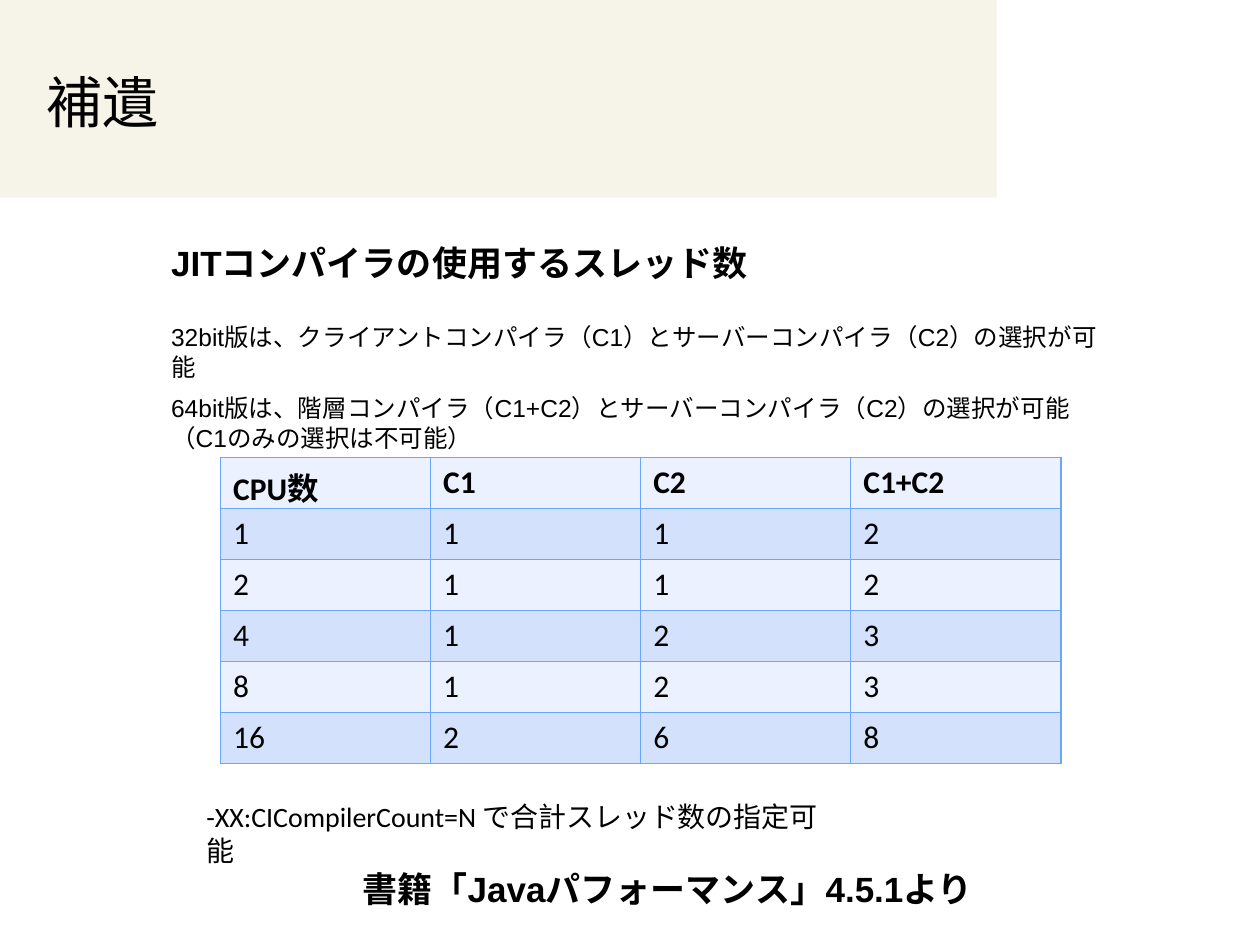
from lxml import etree
from pptx import Presentation
from pptx.dml.color import RGBColor
from pptx.enum.shapes import MSO_SHAPE
from pptx.enum.text import MSO_ANCHOR, PP_ALIGN
from pptx.oxml.ns import qn
from pptx.util import Inches, Pt

RECTANGLE = MSO_SHAPE.RECTANGLE
MIDDLE = MSO_ANCHOR.MIDDLE
CENTER = PP_ALIGN.CENTER

COLORS = {
    "text": "000000",
    "band": "F6F4E8",
    "border": "6BA7F8",
    "light_row": "EBF1FE",
    "dark_row": "D4E1FC",
}

THREAD_COUNTS = [
    ["CPU数", "C1", "C2", "C1+C2"],
    ["1", "1", "1", "2"],
    ["2", "1", "1", "2"],
    ["4", "1", "2", "3"],
    ["8", "1", "2", "3"],
    ["16", "2", "6", "8"],
]


def color(name):
    return RGBColor.from_string(COLORS[name])


class SlideBuilder:
    """Holds the style and the current slide."""

    def __init__(self, slide, font="Arial"):
        self.slide = slide
        self.font = font

    def style(self, paragraph, font_format, paragraph_format=None):
        for key, value in (paragraph_format or {}).items():
            setattr(paragraph, key, value)
        for key, value in {"name": self.font, **font_format}.items():
            setattr(paragraph.font, key, value)
        paragraph.font.color.rgb = color("text")

    def band(self, left, top, width, height):
        band = self.slide.shapes.add_shape(
            RECTANGLE, Inches(left), Inches(top), Inches(width), Inches(height))
        band.shadow.inherit = False
        band.fill.solid()
        band.fill.fore_color.rgb = color("band")
        band.line.fill.background()

    def text(self, box, lines, font_format, paragraph_format=None,
             gap=None, anchor=None):
        frame = self.slide.shapes.add_textbox(*map(Inches, box)).text_frame
        frame.word_wrap = True
        frame.vertical_anchor = anchor
        for index, line in enumerate(lines):
            paragraph = frame.add_paragraph() if index else frame.paragraphs[0]
            paragraph.text = line
            self.style(paragraph, font_format, paragraph_format)
            if index:
                paragraph.space_before = gap

    def borders(self, cell):
        properties = cell._tc.get_or_add_tcPr()
        for side in ("a:lnL", "a:lnR", "a:lnT", "a:lnB"):
            line = etree.SubElement(properties, qn(side), w=str(Pt(1)))
            fill = etree.SubElement(line, qn("a:solidFill"))
            etree.SubElement(fill, qn("a:srgbClr"), val=COLORS["border"])

    def table(self, box, rows, font_format):
        table = self.slide.shapes.add_table(
            len(rows), len(rows[0]), *map(Inches, box)).table
        for r, values in enumerate(rows):
            for c, value in enumerate(values):
                cell = table.cell(r, c)
                cell.text = value
                self.borders(cell)
                cell.fill.solid()
                cell.fill.fore_color.rgb = color("dark_row" if r % 2 else "light_row")
                self.style(cell.text_frame.paragraphs[0],
                           {**font_format, "bold": r == 0})


def main():
    presentation = Presentation()
    presentation.slide_width = Inches(10)
    presentation.slide_height = Inches(7.5)
    builder = SlideBuilder(
        presentation.slides.add_slide(presentation.slide_layouts[6]))

    # Title on its band
    builder.band(0, 0, 7.91, 1.57)
    builder.text((0.27, 0.3, 7.48, 1.01), ["補遺"], {"size": Pt(32)}, anchor=MIDDLE)

    # Heading, source and explanation
    heading = {"size": Pt(20), "bold": True}
    builder.text((1.26, 1.87, 7.6, 0.44), ["JITコンパイラの使用するスレッド数"], heading)
    builder.text((1.13, 6.87, 7.84, 0.4), ["書籍「Javaパフォーマンス」4.5.1より"], heading,
                 {"alignment": CENTER, "level": 1, "line_spacing": 0.9})
    builder.text((1.26, 2.51, 7.57, 0.93), [
        "32bit版は、クライアントコンパイラ（C1）とサーバーコンパイラ（C2）の選択が可能",
        "64bit版は、階層コンパイラ（C1+C2）とサーバーコンパイラ（C2）の選択が可能（C1のみの選択は不可能）",
    ], {"size": Pt(14)}, gap=Pt(7))

    # Threads per compiler and CPU count
    builder.table((1.75, 3.63, 6.67, 2.43), THREAD_COUNTS,
                  {"name": "Calibri", "size": Pt(18)})

    # Option for the total
    builder.text((1.54, 6.3, 5.14, 0.37),
                 ["-XX:CICompilerCount=N で合計スレッド数の指定可能"],
                 {"name": "Calibri", "size": Pt(16)})

    presentation.save("out.pptx")


if __name__ == "__main__":
    main()
